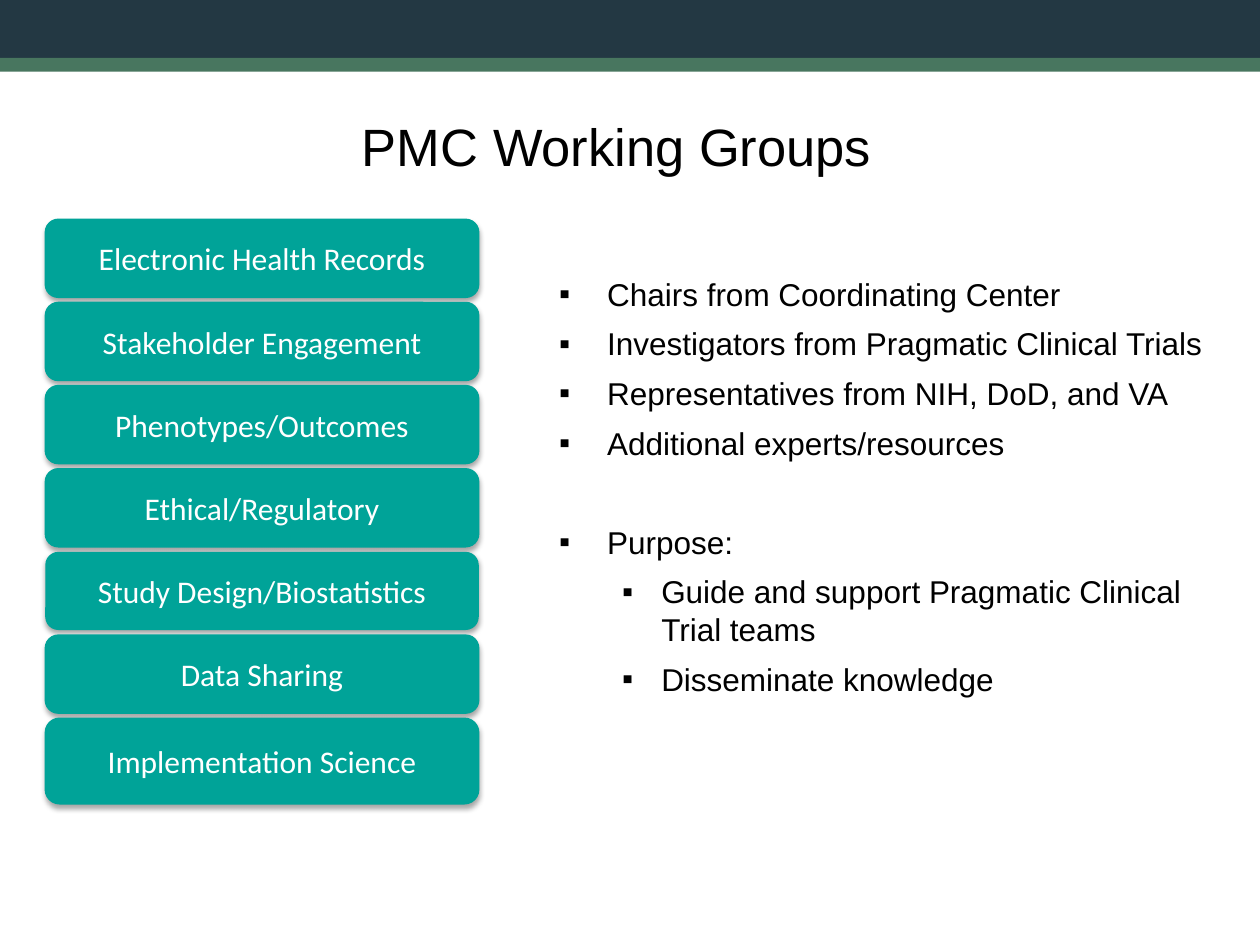
from dataclasses import dataclass

from lxml import etree
from pptx import Presentation
from pptx.dml.color import RGBColor
from pptx.enum import shapes, text
from pptx.oxml import ns
from pptx.util import Inches, Pt

BLACK, WHITE = "000000", "FFFFFF"
NAVY, GREEN, TEAL = "233843", "48765F", "00A398"
GROUP_TOP, GROUP_PITCH = 1.74, 0.66


@dataclass
class WorkingGroup:
    name: str
    height: float = 0.62
    outlined: bool = True


@dataclass
class Point:
    wording: str
    level: int = 0
    space_before: float = 6.8


GROUPS = [
    WorkingGroup("Electronic Health Records"),
    WorkingGroup("Stakeholder Engagement"),
    WorkingGroup("Phenotypes/Outcomes"),
    WorkingGroup("Ethical/Regulatory"),
    WorkingGroup("Study Design/Biostatistics", outlined=False),
    WorkingGroup("Data Sharing"),
    WorkingGroup("Implementation Science", height=0.68),
]

POINTS = [
    Point("Chairs from Coordinating Center", space_before=0),
    Point("Investigators from Pragmatic Clinical Trials"),
    Point("Representatives from NIH, DoD, and VA"),
    Point("Additional experts/resources"),
    Point("Purpose:", space_before=35),
    Point("Guide and support Pragmatic Clinical Trial teams", level=1),
    Point("Disseminate knowledge", level=1),
]

# Left margin and hanging indent in inches for each level
INDENTS = [(0.38, 0.38), (0.81, 0.31)]


def color(hex_code: str) -> RGBColor:
    return RGBColor.from_string(hex_code)


def write(paragraph, wording: str, *, size: float = 18, font: str = "Arial",
          ink: str = BLACK, align=text.PP_ALIGN.LEFT, space_before: float = 0) -> None:
    paragraph.alignment = align
    paragraph.space_before = Pt(space_before)
    run = paragraph.add_run()
    run.text = wording
    run.font.size = Pt(size)
    run.font.name = font
    run.font.color.rgb = color(ink)


def add_bullet(paragraph, level: int) -> None:
    margin, hanging = INDENTS[level]
    paragraph.level = level
    properties = paragraph._p.get_or_add_pPr()
    properties.set("marL", str(Inches(margin)))
    properties.set("indent", str(-Inches(hanging)))
    bullet_color = etree.SubElement(properties, ns.qn("a:buClr"))
    etree.SubElement(bullet_color, ns.qn("a:srgbClr"), val=BLACK)
    etree.SubElement(properties, ns.qn("a:buFont"), typeface="Arial")
    etree.SubElement(properties, ns.qn("a:buChar"), char="▪")


def add_soft_shadow(shape) -> None:
    shape.shadow.inherit = False
    effects = shape._element.spPr.find(ns.qn("a:effectLst"))
    shadow = etree.SubElement(
        effects, ns.qn("a:outerShdw"), blurRad=str(Pt(3.1)), dist=str(Pt(1.8)),
        dir=str(90 * 60000), rotWithShape="0")
    shade = etree.SubElement(shadow, ns.qn("a:srgbClr"), val=BLACK)
    etree.SubElement(shade, ns.qn("a:alpha"), val="35000")


def add_band(slide, top: float, height: float, fill: str) -> None:
    band = slide.shapes.add_shape(
        shapes.MSO_SHAPE.RECTANGLE, 0, Inches(top), Inches(10), Inches(height))
    band.shadow.inherit = False
    band.fill.solid()
    band.fill.fore_color.rgb = color(fill)
    band.line.fill.background()


def add_text_frame(slide, left: float, top: float, width: float, height: float):
    frame = slide.shapes.add_textbox(
        Inches(left), Inches(top), Inches(width), Inches(height)).text_frame
    frame.word_wrap = True
    return frame


def add_group(slide, group: WorkingGroup, row: int) -> None:
    button = slide.shapes.add_shape(
        shapes.MSO_SHAPE.ROUNDED_RECTANGLE, Inches(0.36),
        Inches(GROUP_TOP + row * GROUP_PITCH), Inches(3.44), Inches(group.height))
    button.fill.solid()
    button.fill.fore_color.rgb = color(TEAL)
    if group.outlined:
        button.line.color.rgb = color(TEAL)
        button.line.width = Pt(0.75)
    else:
        button.line.fill.background()
    add_soft_shadow(button)
    frame = button.text_frame
    frame.vertical_anchor = text.MSO_ANCHOR.MIDDLE
    write(frame.paragraphs[0], group.name, font="Calibri", ink=WHITE,
          align=text.PP_ALIGN.CENTER)


def add_points(slide) -> None:
    frame = add_text_frame(slide, 4.34, 2.13, 5.54, 4.25)
    for index, point in enumerate(POINTS):
        paragraph = frame.add_paragraph() if index else frame.paragraphs[0]
        add_bullet(paragraph, point.level)
        write(paragraph, point.wording, space_before=point.space_before)


def main() -> None:
    deck = Presentation()
    deck.slide_width, deck.slide_height = Inches(10), Inches(7.5)
    slide = deck.slides.add_slide(deck.slide_layouts[6])

    add_band(slide, 0, 0.54, NAVY)
    add_band(slide, 0.46, 0.11, GREEN)

    title = add_text_frame(slide, 0.18, 0.69, 9.43, 0.93)
    title.vertical_anchor = text.MSO_ANCHOR.MIDDLE
    write(title.paragraphs[0], "PMC Working Groups", size=30,
          align=text.PP_ALIGN.CENTER)

    add_points(slide)
    for row, group in enumerate(GROUPS):
        add_group(slide, group, row)
    deck.save("out.pptx")


if __name__ == "__main__":
    main()
